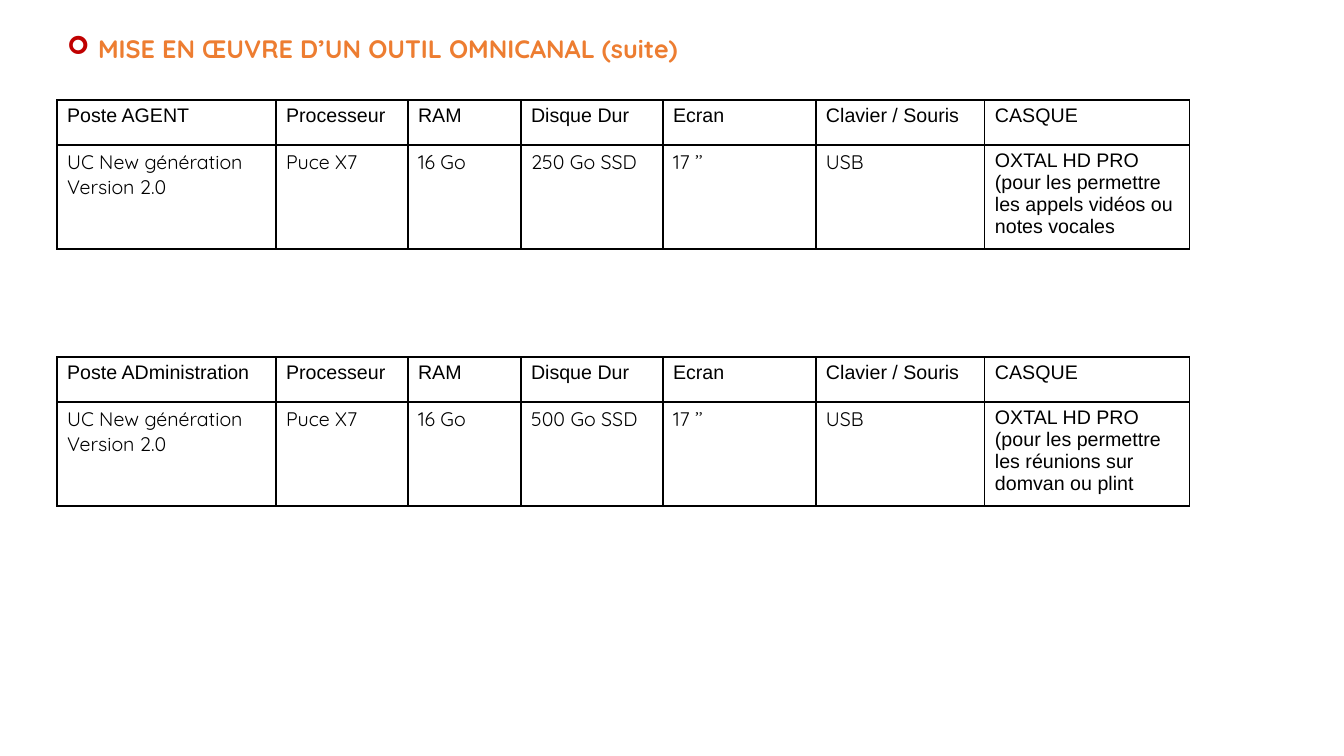
from lxml import etree
from pptx import Presentation
from pptx import util as u
from pptx.dml.color import RGBColor
from pptx.enum import text as t
from pptx.oxml import ns

PX = 12192000 / 1344  # EMU per px
COLS = [219, 132, 113, 142, 153, 169, 205]
ROWS = [45, 104]
HEADS = ["Processeur", "RAM", "Disque Dur", "Ecran", "Clavier / Souris", "CASQUE"]


def px(n):
    return u.Emu(round(n * PX))


def color(code):
    return RGBColor.from_string(code)


def add(root, tag, **attrs):
    return etree.SubElement(root, ns.qn("a:" + tag), attrs)


def write(frame, words, font="Arial", size=14, hue="000000", bold=False,
          align=t.PP_ALIGN.LEFT, space=None, bullet=None, indent=0):
    par = frame.paragraphs[0]
    par.alignment = align
    if space:
        par.line_spacing = space
    if bullet:
        props = par._p.get_or_add_pPr()
        props.set("marL", str(px(indent)))
        props.set("indent", str(-px(indent)))
        add(add(props, "buClr"), "srgbClr", val="C00000")
        add(props, "buFont", typeface="Wingdings")
        add(props, "buChar", char=bullet)
    run = par.add_run()
    run.text = words
    run.font.name = font
    run.font.size = u.Pt(size)
    run.font.bold = bold
    run.font.color.rgb = color(hue)


def border(cell):
    props = cell._tc.get_or_add_tcPr()
    for side in ("lnL", "lnR", "lnT", "lnB"):
        line = add(props, side, w=str(u.Pt(0.96)))
        add(add(line, "solidFill"), "srgbClr", val="000000")


# Heading with its arrow bullet
def heading(slide, x, y, w, h):
    title = slide.shapes.title
    title.left, title.top, title.width, title.height = map(px, (x, y, w, h))
    frame = title.text_frame
    frame.word_wrap = True
    frame.auto_size = t.MSO_AUTO_SIZE.NONE
    frame.vertical_anchor = t.MSO_ANCHOR.TOP
    write(frame, "MISE EN ŒUVRE D’UN OUTIL OMNICANAL (suite)", font="Quicksand",
          size=18, hue="ED7D31", bold=True, align=t.PP_ALIGN.JUSTIFY,
          space=1.5, bullet="➢", indent=31)


# Equipment of one type of workstation
def station(slide, x, y, name, disk, usage):
    table = slide.shapes.add_table(
        len(ROWS), len(COLS), px(x), px(y), px(sum(COLS)), px(sum(ROWS))).table
    table.first_row = table.horz_banding = False
    for col, width in zip(table.columns, COLS):
        col.width = px(width)
    specs = ["UC New génération Version 2.0", "Puce X7", "16 Go", disk,
             "17\u00a0’’".replace("\u00a0", " "), "USB",
             "OXTAL HD PRO (pour les permettre " + usage]
    for r, (height, words) in enumerate(zip(ROWS, ([name] + HEADS, specs))):
        table.rows[r].height = px(height)
        for c, word in enumerate(words):
            cell = table.cell(r, c)
            light = r == 1 and c < len(COLS) - 1
            write(cell.text_frame, word, font="Quicksand" if light else "Arial")
            border(cell)
            cell.fill.background()


def main():
    deck = Presentation()
    deck.slide_width, deck.slide_height = px(1344), px(756)
    slide = deck.slides.add_slide(deck.slide_layouts[5])
    heading(slide, 57, 13, 1213, 70)
    station(slide, 57, 100, "Poste AGENT", "250 Go SSD",
            "les appels vidéos ou notes vocales")
    station(slide, 57, 357, "Poste ADministration", "500 Go SSD",
            "les réunions sur domvan ou plint")
    deck.save("out.pptx")


if __name__ == "__main__":
    main()
